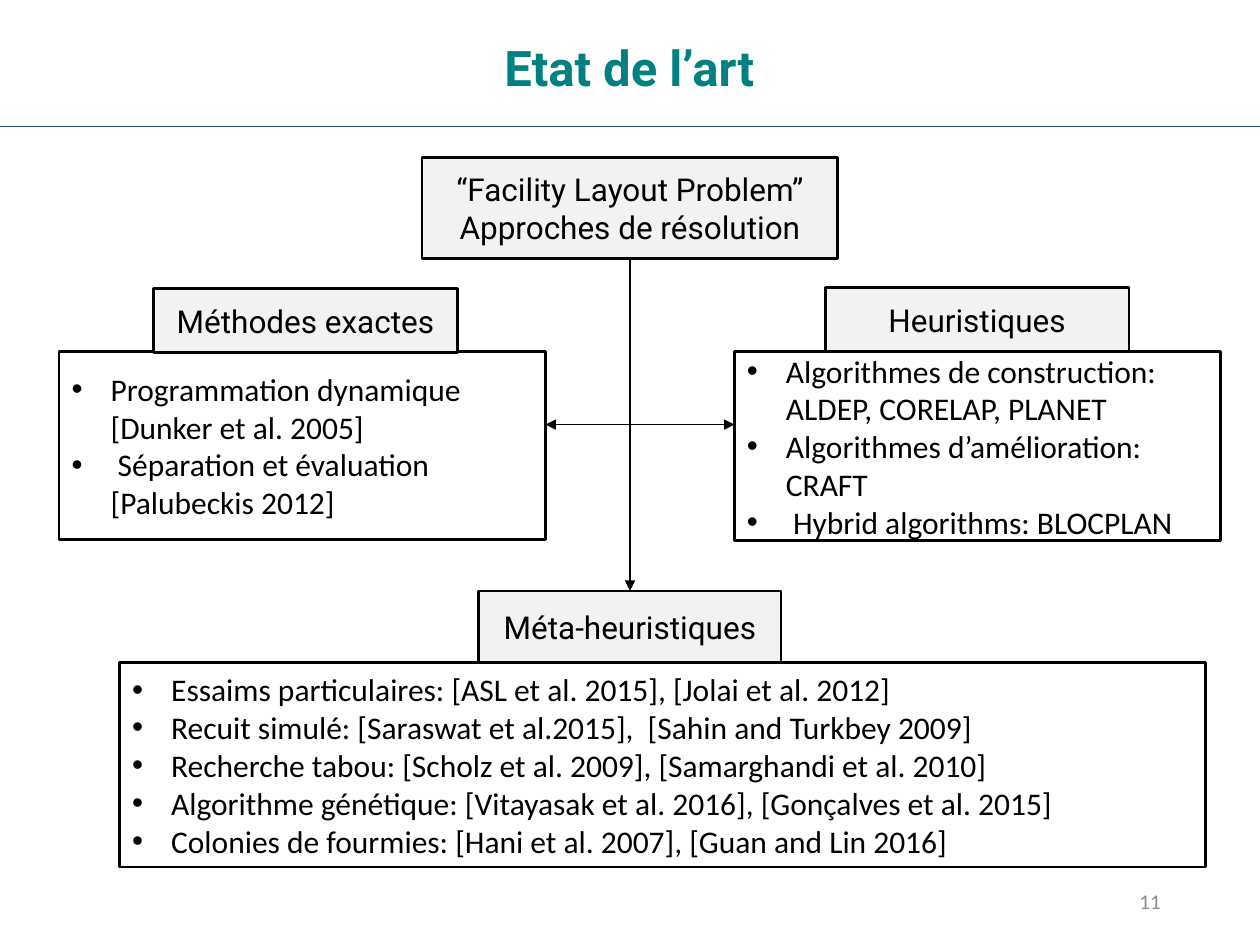
from pptx import Presentation
from pptx.dml.color import RGBColor
from pptx.enum.shapes import MSO_CONNECTOR, MSO_SHAPE
from pptx.enum.text import MSO_ANCHOR, PP_ALIGN
from pptx.oxml.ns import qn
from pptx.util import Inches, Pt
from lxml.etree import SubElement

BLACK = RGBColor(0x00, 0x00, 0x00)
WHITE = RGBColor(0xFF, 0xFF, 0xFF)
PALE = RGBColor(0xF2, 0xF2, 0xF2)
TEAL = RGBColor(0x00, 0x80, 0x80)
NAVY = RGBColor(0x1F, 0x4E, 0x79)
GREY = RGBColor(0x8C, 0x8C, 0x8C)

HEADING = {"name": "Roboto", "size": Pt(18)}
BODY = {"name": "Calibri", "size": Pt(18)}
TITLE = {"name": "Roboto", "size": Pt(28), "bold": True}
NUMBER = {"name": "Calibri", "size": Pt(12)}

# Heading box, list box, heading, list items, list alignment
METHODS = [
    ((1.22, 2.29, 2.41, 0.51), (0.47, 2.79, 3.86, 1.49), "Méthodes exactes", [
        "Programmation dynamique [Dunker et al. 2005]",
        " Séparation et évaluation [Palubeckis 2012]",
    ], PP_ALIGN.LEFT),
    ((6.55, 2.28, 2.41, 0.51), (5.83, 2.79, 3.86, 1.5), "Heuristiques", [
        "Algorithmes de construction: ALDEP, CORELAP, PLANET",
        "Algorithmes d’amélioration: CRAFT",
        " Hybrid algorithms: BLOCPLAN",
    ], PP_ALIGN.LEFT),
    ((3.8, 4.69, 2.4, 0.57), (0.95, 5.26, 8.62, 1.62), "Méta-heuristiques", [
        "Essaims particulaires: [ASL et al. 2015], [Jolai et al. 2012]",
        "Recuit simulé: [Saraswat et al.2015],  [Sahin and Turkbey 2009]",
        "Recherche tabou: [Scholz et al. 2009], [Samarghandi et al. 2010]",
        "Algorithme génétique: [Vitayasak et al. 2016], [Gonçalves et al. 2015]",
        "Colonies de fourmies: [Hani et al. 2007], [Guan and Lin 2016]",
    ], PP_ALIGN.JUSTIFY),
]


def inches(values):
    return [Inches(v) for v in values]


def add_bullet(p):
    pPr = p._p.get_or_add_pPr()
    pPr.set("marL", str(Inches(0.31)))
    pPr.set("indent", str(-Inches(0.31)))
    SubElement(pPr, qn("a:buFont"), typeface="Arial")
    SubElement(pPr, qn("a:buChar"), char="•")


def write(tf, lines, style, color=BLACK, align=PP_ALIGN.CENTER, bullets=False):
    tf.word_wrap = True
    for i, line in enumerate(lines):
        p = tf.paragraphs[0] if i == 0 else tf.add_paragraph()
        p.alignment = align
        if bullets:
            add_bullet(p)
        r = p.add_run()
        r.text = line
        for name, value in style.items():
            setattr(r.font, name, value)
        r.font.color.rgb = color


def add_box(s, box, fill, lines, style, **options):
    sp = s.shapes.add_shape(MSO_SHAPE.RECTANGLE, *inches(box))
    sp.shadow.inherit = False
    sp.fill.solid()
    sp.fill.fore_color.rgb = fill
    sp.line.color.rgb = BLACK
    sp.line.width = Pt(1.5)
    sp.text_frame.vertical_anchor = MSO_ANCHOR.MIDDLE
    write(sp.text_frame, lines, style, **options)
    return sp


def add_label(s, box, text, style, color, align, anchor):
    tf = s.shapes.add_textbox(*inches(box)).text_frame
    tf.vertical_anchor = anchor
    write(tf, [text], style, color, align)


def add_line(s, ends, color, width, arrow=False):
    line = s.shapes.add_connector(MSO_CONNECTOR.STRAIGHT, *inches(ends))
    line.line.color.rgb = color
    line.line.width = Pt(width)
    if arrow:
        SubElement(line.line._get_or_add_ln(), qn("a:tailEnd"), type="triangle")
    SubElement(line._element.spPr, qn("a:effectLst"))
    return line


def add_header(s):
    add_line(s, (0, 1, 10, 1), NAVY, 0.5)
    add_label(s, (2.05, 0.25, 5.89, 0.57), "Etat de l’art", TITLE, TEAL,
              PP_ALIGN.CENTER, MSO_ANCHOR.TOP)


def add_method(s, heading_box, list_box, heading, items, align):
    """Place a heading on top of its bulleted list and return the heading."""
    add_box(s, list_box, WHITE, items, BODY, align=align, bullets=True)
    return add_box(s, heading_box, PALE, [heading], HEADING)


def add_diagram(s):
    root = add_box(s, (3.35, 1.25, 3.3, 0.8), PALE,
                   ["“Facility Layout Problem”", "Approches de résolution"], HEADING)
    headings = [add_method(s, *method) for method in METHODS]
    trunk = add_line(s, (5, 2.05, 5, 4.69), BLACK, 1, arrow=True)
    trunk.begin_connect(root, 2)
    trunk.end_connect(headings[-1], 0)
    for x in (4.33, 5.83):
        add_line(s, (5.04, 3.37, x, 3.37), BLACK, 1, arrow=True)


def main():
    prs = Presentation()
    prs.slide_width, prs.slide_height = Inches(10), Inches(7.5)
    s = prs.slides.add_slide(prs.slide_layouts[6])
    add_header(s)
    add_diagram(s)
    add_label(s, (7.06, 6.95, 2.25, 0.4), "11", NUMBER, GREY,
              PP_ALIGN.RIGHT, MSO_ANCHOR.MIDDLE)
    prs.save("out.pptx")


if __name__ == "__main__":
    main()
